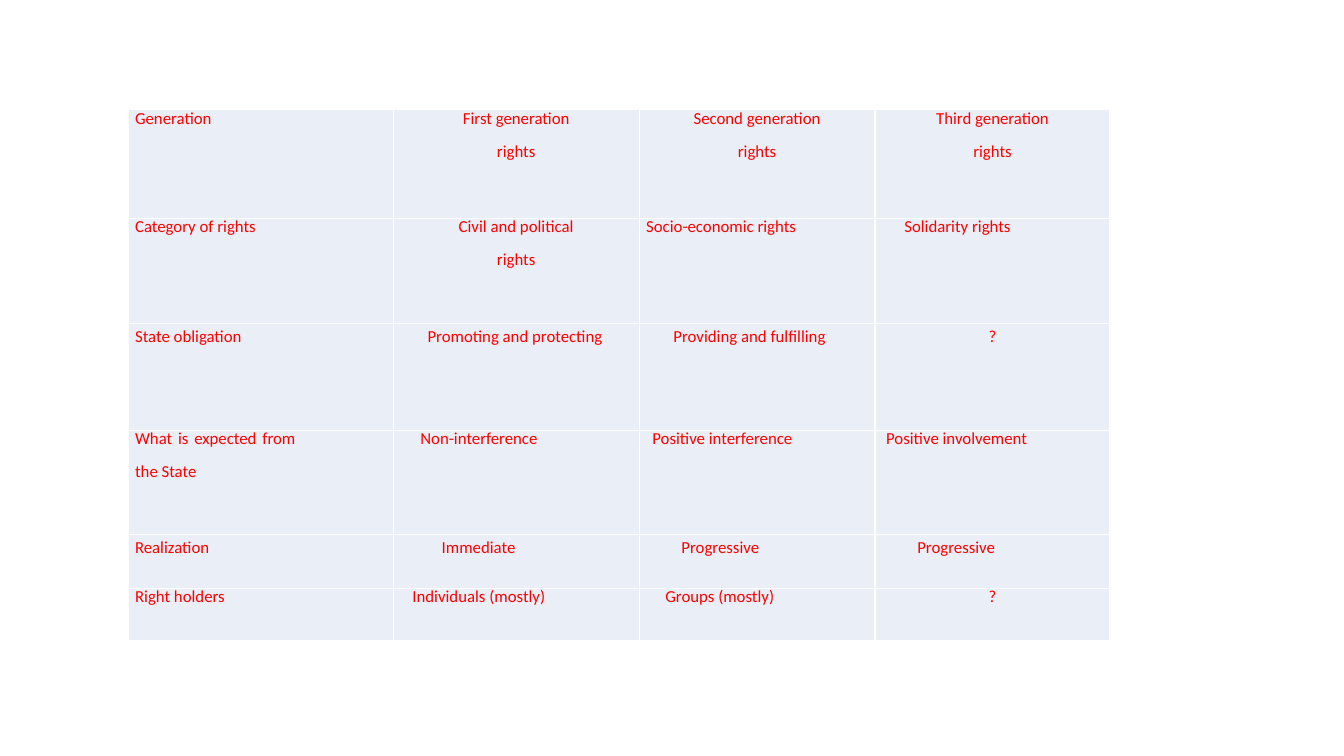
from lxml import etree
from pptx import Presentation
from pptx.dml.color import RGBColor
from pptx.enum.text import PP_ALIGN
from pptx.oxml.ns import qn
from pptx.util import Pt

LEFT, CENTER = PP_ALIGN.LEFT, PP_ALIGN.CENTER
COLORS = {"text": "FF0000", "cell": "EAEFF7", "border": "FFFFFF"}
FONT = {"name": "Calibri", "size": Pt(12), "bold": False}
INSETS = {"margin_left": 0, "margin_right": 0, "margin_top": 0, "margin_bottom": 0}
BANDING = {"first_row": False, "horz_banding": False}

TABLE_LEFT, TABLE_TOP = 91.5, 78.5
COLUMN_WIDTHS = [189.4, 175.7, 168.5, 167.8]
LABEL_INDENT = 5
NEXT_LINE_GAP = 6.8
NEXT_LINE_SPACING = 1.15
WIDE_SPACE = 1.4
BORDER_WIDTH = 1

RIGHTS = [
    {"height": 77.8, "spacing": Pt(13.4), "before": 0, "cells": [
        (["Generation"], LABEL_INDENT),
        (["First generation", "rights"], CENTER),
        (["Second generation", "rights"], CENTER),
        (["Third generation", "rights"], CENTER)]},
    {"height": 74.9, "spacing": Pt(12.7), "before": 0, "cells": [
        (["Category of rights"], LABEL_INDENT),
        (["Civil and political", "rights"], CENTER),
        (["Socio-economic rights"], LABEL_INDENT),
        (["Solidarity rights"], 20.9)]},
    {"height": 76.3, "spacing": 1.15, "before": 0.1, "cells": [
        (["State obligation"], LABEL_INDENT),
        (["Promoting and protecting"], (36, -11.5)),
        (["Providing and fulfilling"], (37.5, -13)),
        (["?"], CENTER)]},
    {"height": 74.2, "spacing": Pt(13.2), "before": 0, "cells": [
        (["What is expected from", "the State"], LABEL_INDENT),
        (["Non-interference"], 19.4),
        (["Positive interference"], 9.4),
        (["Positive involvement"], 7.9)]},
    {"height": 38.9, "spacing": 1.15, "before": 0.1, "cells": [
        (["Realization"], LABEL_INDENT),
        (["Immediate"], 34.6),
        (["Progressive"], 30.2),
        (["Progressive"], 30.2)]},
    {"height": 37.4, "spacing": Pt(13.2), "before": 0, "cells": [
        (["Right holders"], LABEL_INDENT),
        (["Individuals (mostly)"], 13.7),
        (["Groups (mostly)"], 18.7),
        (["?"], CENTER)]},
]
STRETCHED_LINE = "What is expected from"


def apply(target, values):
    for name, value in values.items():
        setattr(target, name, value)


def add_borders(cell):
    properties = cell._tc.get_or_add_tcPr()
    for side in ("lnL", "lnR", "lnT", "lnB"):
        line = etree.SubElement(properties, qn(f"a:{side}"), w=str(Pt(BORDER_WIDTH)))
        solid = etree.SubElement(line, qn("a:solidFill"))
        etree.SubElement(solid, qn("a:srgbClr"), val=COLORS["border"])


def add_words(paragraph, words, extra=0):
    run = paragraph.add_run()
    run.text = words
    apply(run.font, FONT)
    run.font.color.rgb = RGBColor.from_string(COLORS["text"])
    if extra:
        run._r.get_or_add_rPr().set("spc", str(round(extra * 100)))


def add_line(paragraph, line):
    if line != STRETCHED_LINE:
        add_words(paragraph, line)
        return
    for position, word in enumerate(line.split()):
        if position:
            add_words(paragraph, " ", WIDE_SPACE)
        add_words(paragraph, word)


def place(paragraph, placement):
    if placement is CENTER:
        paragraph.alignment = CENTER
        return
    paragraph.alignment = LEFT
    margin, first = placement if isinstance(placement, tuple) else (placement, 0)
    properties = paragraph._p.get_or_add_pPr()
    properties.set("marL", str(Pt(margin)))
    properties.set("indent", str(Pt(first)))


def fill_cell(cell, lines, placement, row):
    apply(cell, INSETS)
    add_borders(cell)
    cell.fill.solid()
    cell.fill.fore_color.rgb = RGBColor.from_string(COLORS["cell"])
    frame = cell.text_frame
    for position, line in enumerate(lines):
        paragraph = frame.add_paragraph() if position else frame.paragraphs[0]
        place(paragraph, placement)
        paragraph.line_spacing = NEXT_LINE_SPACING if position else row["spacing"]
        paragraph.space_before = Pt(NEXT_LINE_GAP if position else row["before"])
        add_line(paragraph, line)


def main():
    deck = Presentation()
    deck.slide_width, deck.slide_height = Pt(960), Pt(540)
    slide = deck.slides.add_slide(deck.slide_layouts[6])
    table = slide.shapes.add_table(
        len(RIGHTS), len(COLUMN_WIDTHS), Pt(TABLE_LEFT), Pt(TABLE_TOP),
        Pt(sum(COLUMN_WIDTHS)), Pt(sum(row["height"] for row in RIGHTS))).table
    apply(table, BANDING)
    for column, width in zip(table.columns, COLUMN_WIDTHS):
        column.width = Pt(width)
    for table_row, row in zip(table.rows, RIGHTS):
        table_row.height = Pt(row["height"])
        for cell, (lines, placement) in zip(table_row.cells, row["cells"]):
            fill_cell(cell, lines, placement, row)
    deck.save("out.pptx")


if __name__ == "__main__":
    main()
